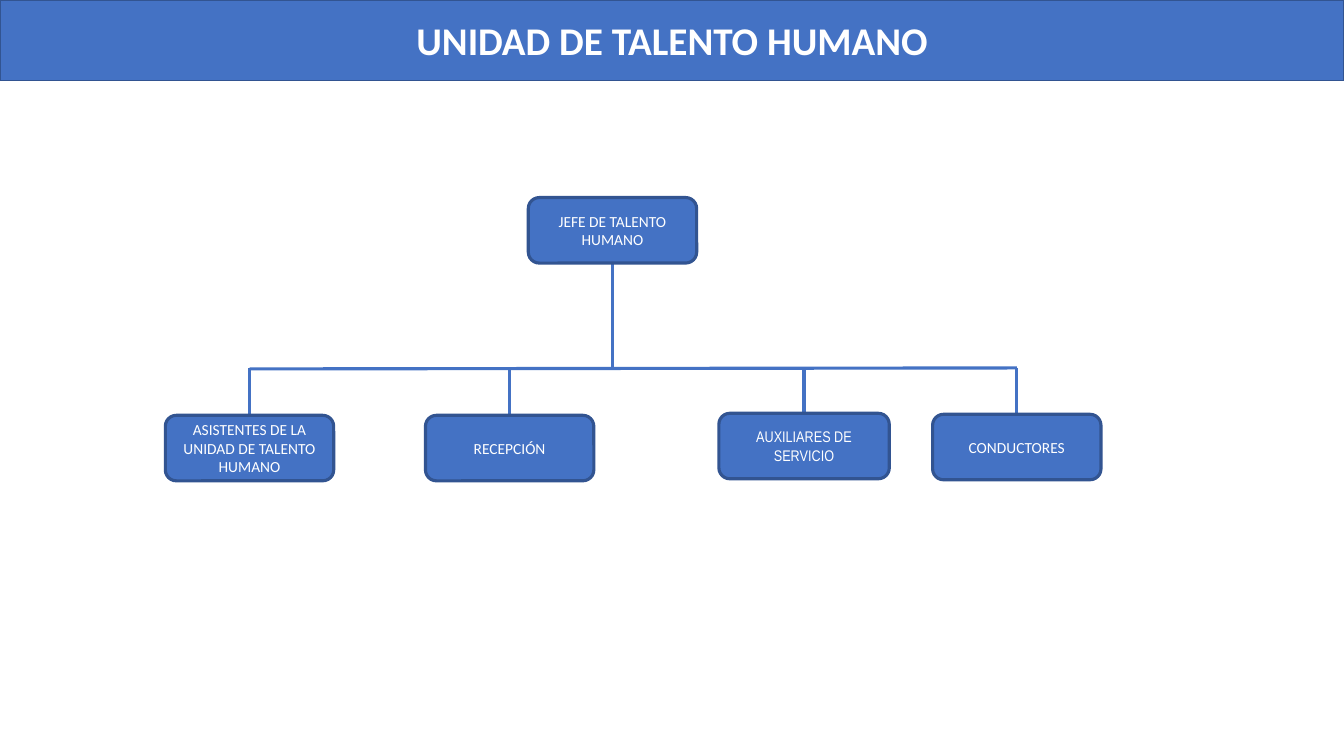
from lxml import etree
from pptx import Presentation
from pptx.dml.color import RGBColor
from pptx.enum import shapes, text
from pptx.oxml.ns import qn
from pptx.util import Inches, Pt

TITLE = "UNIDAD DE TALENTO HUMANO"
# label, left, top, width, font
CHIEF = ("JEFE DE TALENTO HUMANO", 5.24, 1.96, 1.67, "Calibri")
TEAMS = [
    ("ASISTENTES DE LA UNIDAD DE TALENTO HUMANO", 1.64, 4.12, 1.67, "Calibri"),
    ("RECEPCIÓN", 4.22, 4.12, 1.67, "Calibri"),
    ("AUXILIARES DE SERVICIO", 7.13, 4.1, 1.69, "Arial Narrow"),
    ("CONDUCTORES", 9.25, 4.11, 1.67, "Calibri"),
]
COLORS = {"fill": "4472C4", "outline": "325491", "text": "FFFFFF"}
SLIDE_WIDTH, SLIDE_HEIGHT = 13.33, 7.5
TITLE_HEIGHT = 0.8
BOX_HEIGHT = 0.65
BUS_LEFT_Y, BUS_RIGHT_Y = 3.66, 3.65
LINE_WIDTH = 2.25


def color(name):
    return RGBColor.from_string(COLORS[name])


def style_box(shape, label, font_name, size, line_width, bold=False):
    shape.fill.solid()
    shape.fill.fore_color.rgb = color("fill")
    shape.line.color.rgb = color("outline")
    shape.line.width = Pt(line_width)
    frame = shape.text_frame
    frame.word_wrap = True
    frame.auto_size = text.MSO_AUTO_SIZE.NONE
    frame.vertical_anchor = text.MSO_ANCHOR.MIDDLE
    paragraph = frame.paragraphs[0]
    paragraph.alignment = text.PP_ALIGN.CENTER
    run = paragraph.add_run()
    run.text = label
    run.font.name = font_name
    run.font.size = Pt(size)
    run.font.bold = bold
    run.font.color.rgb = color("text")


def add_line(slide, x1, y1, x2, y2):
    line = slide.shapes.add_connector(
        shapes.MSO_CONNECTOR.STRAIGHT, *map(Inches, (x1, y1, x2, y2)))
    line.line.color.rgb = color("fill")
    line.line.width = Pt(LINE_WIDTH)
    etree.SubElement(line._element.spPr, qn("a:effectLst"))


def add_position(slide, label, left, top, width, font_name):
    shape = slide.shapes.add_shape(
        shapes.MSO_SHAPE.ROUNDED_RECTANGLE,
        *map(Inches, (left, top, width, BOX_HEIGHT)))
    shape.shadow.inherit = False
    style_box(shape, label, font_name, 11, LINE_WIDTH)


def center_x(position):
    _, left, _, width, _ = position
    return left + width / 2


def main():
    presentation = Presentation()
    presentation.slide_width = Inches(SLIDE_WIDTH)
    presentation.slide_height = Inches(SLIDE_HEIGHT)
    slide = presentation.slides.add_slide(presentation.slide_layouts[5])

    title = slide.shapes.title
    title.left, title.top = Inches(0), Inches(0)
    title.width, title.height = Inches(SLIDE_WIDTH), Inches(TITLE_HEIGHT)
    style_box(title, TITLE, "Calibri", 28, 1, bold=True)

    chief_x = center_x(CHIEF)
    add_line(slide, chief_x, CHIEF[2] + BOX_HEIGHT, chief_x, BUS_LEFT_Y)
    add_line(slide, center_x(TEAMS[0]), BUS_LEFT_Y,
             center_x(TEAMS[-1]), BUS_RIGHT_Y)
    for team in TEAMS:
        add_line(slide, center_x(team), BUS_RIGHT_Y, center_x(team), team[2])
    for position in [CHIEF, *TEAMS]:
        add_position(slide, *position)

    presentation.save("out.pptx")


if __name__ == "__main__":
    main()
